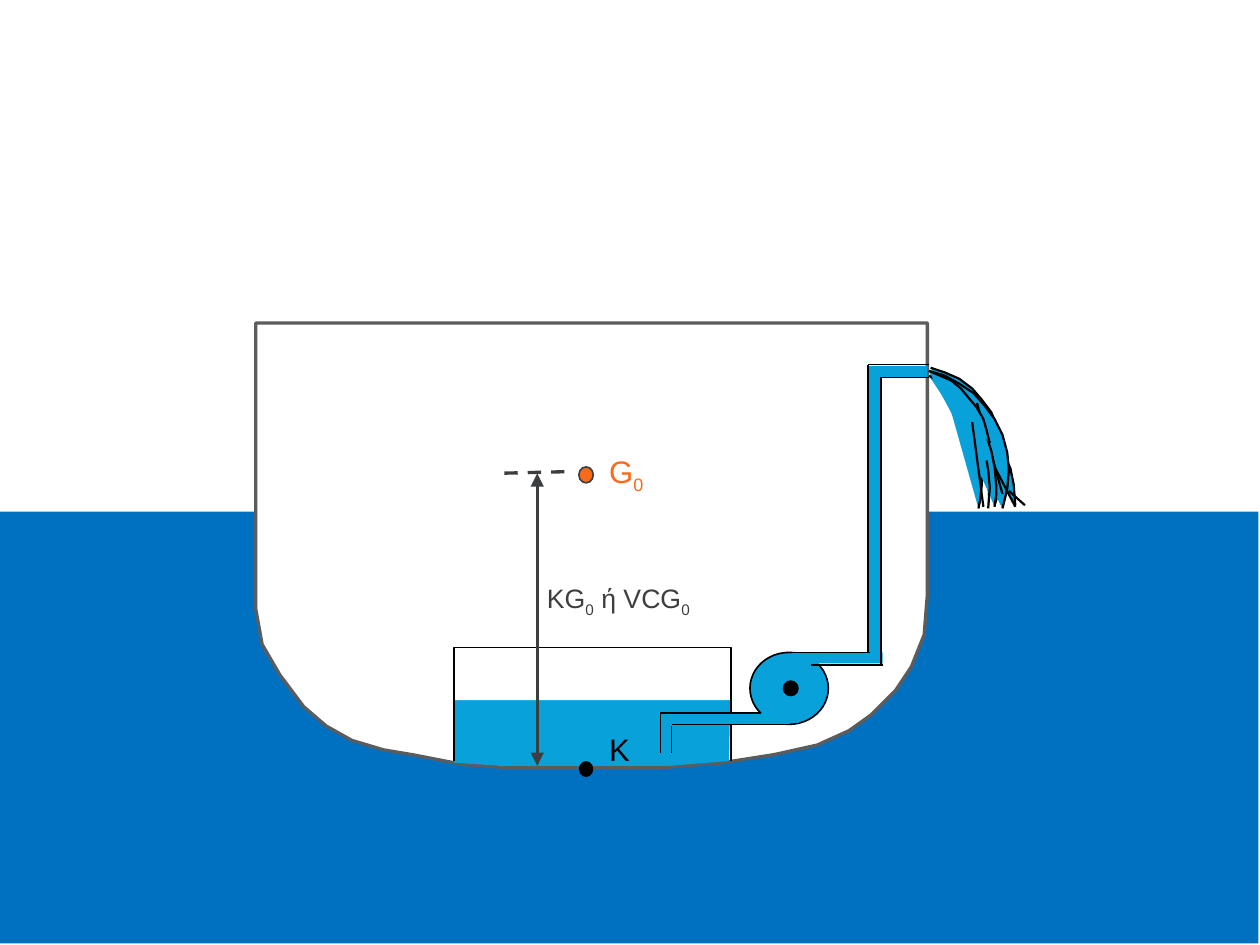
from lxml import etree
from pptx import Presentation
from pptx.dml.color import RGBColor
from pptx.enum import dml, shapes, text
from pptx.oxml import ns
from pptx.util import Inches, Pt

COLORS = {
    "sea": "0070C0", "water": "08A1D9", "white": "FFFFFF", "hull": "5B5C5E",
    "black": "000000", "dark": "3C3E3F", "orange": "F96A1B",
}

HULL = [
    (1.6, 2.02), (1.6, 3.81), (1.64, 4.03), (1.75, 4.22), (1.9, 4.42), (2.04, 4.54),
    (2.2, 4.63), (2.4, 4.69), (2.58, 4.72), (2.89, 4.78), (3.17, 4.8), (4.15, 4.8),
    (4.52, 4.77), (4.84, 4.72), (5.11, 4.66), (5.31, 4.57), (5.45, 4.47), (5.6, 4.32),
    (5.7, 4.17), (5.78, 3.97), (5.8, 3.72), (5.8, 2.02),
]
TANK_WATER = [(2.84, 4.77), (3.15, 4.79), (4.18, 4.79), (4.56, 4.76), (4.57, 4.19), (2.84, 4.19)]
TANK_WALL = [(2.84, 4.76), (2.84, 4.05), (4.57, 4.05), (4.57, 4.76)]

# Jets of discharged water, back to front, around the loose straight strands
BACK_JETS = [
    [(5.88, 2.33), (5.94, 2.39), (5.99, 2.46), (6.03, 2.53), (6.07, 2.61), (6.1, 2.69),
     (6.13, 2.81), (6.14, 2.9), (6.14, 3.04), (6.13, 3.13), (6.12, 3.18)],
    [(5.81, 2.35), (5.91, 2.4), (5.99, 2.45), (6.06, 2.51), (6.13, 2.58), (6.19, 2.66),
     (6.24, 2.75), (6.28, 2.84), (6.32, 2.93), (6.34, 3.03), (6.35, 3.16)],
    [(5.82, 2.34), (5.9, 2.37), (5.98, 2.43), (6.06, 2.5), (6.13, 2.58), (6.2, 2.67),
     (6.25, 2.77), (6.29, 2.87), (6.3, 2.96), (6.29, 3.06), (6.27, 3.16)],
    [(5.82, 2.3), (5.91, 2.33), (6, 2.37), (6.08, 2.43), (6.14, 2.5), (6.2, 2.58),
     (6.24, 2.68), (6.27, 2.81), (6.27, 2.95), (6.25, 3.06), (6.22, 3.16)],
    [(5.81, 2.32), (5.91, 2.35), (6, 2.4), (6.09, 2.46), (6.16, 2.54), (6.22, 2.62),
     (6.27, 2.72), (6.3, 2.83), (6.31, 2.94), (6.3, 3.06), (6.27, 3.18)],
]
STRANDS = [(6.11, 2.52, 6.27, 3.09), (5.97, 2.44, 6.35, 3.17), (6.31, 3.07, 6.41, 3.16)]
FRONT_JETS = [
    [(5.88, 2.34), (5.96, 2.41), (6.03, 2.48), (6.08, 2.56), (6.13, 2.64), (6.17, 2.73),
     (6.2, 2.82), (6.22, 2.92), (6.23, 3.03), (6.23, 3.1), (6.22, 3.17)],
    [(5.81, 2.32), (5.88, 2.35), (5.95, 2.38), (6.01, 2.43), (6.06, 2.49), (6.11, 2.55),
     (6.15, 2.62), (6.17, 2.69), (6.19, 2.77)],
    [(6.17, 2.88), (6.18, 2.94), (6.19, 3.05), (6.18, 3.18)],
]
FRONT_STRAND = (6.08, 2.64, 6.15, 3.17)

PIPE_FILLS = [
    (4.77, 4.43, 0.23, 0.09), (4.3, 4.46, 0.64, 0.07), (4.95, 4.08, 0.57, 0.07),
    (4.89, 4.14, 0.23, 0.09), (5.43, 2.3, 0.08, 1.81), (5.43, 2.29, 0.37, 0.07),
]
PIPE_EDGES = [
    (4.76, 4.46, 4.13, 4.46), (4.94, 4.53, 4.2, 4.53), (5.44, 4.08, 4.94, 4.08),
    (5.52, 4.16, 5.07, 4.16), (4.2, 4.71, 4.2, 4.54), (4.13, 4.71, 4.13, 4.46),
    (5.51, 4.16, 5.51, 2.36), (5.81, 2.28, 5.43, 2.28), (5.81, 2.36, 5.51, 2.36),
    (5.43, 4.08, 5.43, 2.28),
]


def rgb(name):
    return RGBColor.from_string(COLORS[name])


def style(sp, fill, line, width):
    sp.shadow.inherit = False
    if fill:
        sp.fill.solid()
        sp.fill.fore_color.rgb = rgb(fill)
    else:
        sp.fill.background()
    if line:
        sp.line.color.rgb = rgb(line)
        sp.line.width = Pt(width)
    else:
        sp.line.fill.background()


def add_preset(s, kind, box, fill, line=None, width=0.75):
    style(s.shapes.add_shape(kind, *map(Inches, box)), fill, line, width)


def add_rect(s, box, fill):
    add_preset(s, shapes.MSO_SHAPE.RECTANGLE, box, fill)


def add_oval(s, box, fill, line=None):
    add_preset(s, shapes.MSO_SHAPE.OVAL, box, fill, line)


def add_outline(s, points, fill=None, line=None, width=1, close=False):
    start, *rest = [(Inches(x), Inches(y)) for x, y in points]
    builder = s.shapes.build_freeform(*start)
    builder.add_line_segments(rest, close=close)
    style(builder.convert_to_shape(), fill, line, width)


def add_line(s, ends, color="black", width=0.75, dash=None, arrows=False):
    sp = s.shapes.add_connector(shapes.MSO_CONNECTOR.STRAIGHT, *map(Inches, ends))
    sp.line.color.rgb = rgb(color)
    sp.line.width = Pt(width)
    if dash:
        sp.line.dash_style = dash
    if arrows:
        ln = sp.line._get_or_add_ln()
        for end in ("a:headEnd", "a:tailEnd"):
            etree.SubElement(ln, ns.qn(end), type="triangle")
    etree.SubElement(sp._element.spPr, ns.qn("a:effectLst"))


def add_label(s, box, parts, size, color, fill="white", anchor=text.MSO_ANCHOR.MIDDLE):
    """Add a one-line label; every second part is a subscript."""
    sp = s.shapes.add_textbox(*map(Inches, box))
    if fill:
        sp.fill.solid()
        sp.fill.fore_color.rgb = rgb(fill)
    tf = sp.text_frame
    tf.margin_left = tf.margin_right = tf.margin_top = tf.margin_bottom = 0
    tf.word_wrap = False
    tf.vertical_anchor = anchor
    p = tf.paragraphs[0]
    p.alignment = text.PP_ALIGN.LEFT
    p.line_spacing = 0.85
    p.font.name = "Arial"
    p.font.size = Pt(size)
    p.font.color.rgb = rgb(color)
    for i, part in enumerate(parts):
        r = p.add_run()
        r.text = part
        if i % 2:
            r.font._element.set("baseline", "-25000")


def add_ship(s):
    add_rect(s, (0, 3.2, 7.87, 2.7), "sea")
    add_outline(s, HULL, "white", "hull", 1.5, close=True)
    add_outline(s, TANK_WATER, "water", close=True)


def add_discharge(s):
    for jet in BACK_JETS:
        add_outline(s, jet, "water", "black")
    for strand in STRANDS:
        add_line(s, strand, width=1)
    for jet in FRONT_JETS:
        add_outline(s, jet, "water", "black")
    add_line(s, FRONT_STRAND, width=1)


def add_tank_and_pump(s):
    add_rect(s, (2.84, 4.18, 1.73, 0.2), "white")
    add_outline(s, TANK_WALL, line="black", width=0.75)
    add_oval(s, (4.69, 4.08, 0.49, 0.45), "water", "black")
    add_oval(s, (4.9, 4.26, 0.09, 0.09), "black", "black")
    for box in PIPE_FILLS:
        add_rect(s, box, "water")
    for edge in PIPE_EDGES:
        add_line(s, edge)


def add_gravity_marks(s):
    add_oval(s, (3.62, 2.92, 0.09, 0.1), "orange", "dark")
    add_line(s, (3.53, 2.95, 3.12, 2.96), "dark", 1.5, dash=dml.MSO_LINE.DASH)
    add_line(s, (3.36, 4.79, 3.36, 2.96), "dark", 1.5, arrows=True)
    add_label(s, (3.42, 3.56, 1.07, 0.38), ["KG", "0", " ή VCG", "0"], 12, "dark")
    add_label(s, (3.81, 2.77, 0.47, 0.37), ["G", "0"], 14, "orange")
    add_oval(s, (3.62, 4.76, 0.09, 0.1), "black")
    add_label(s, (3.81, 4.42, 0.47, 0.38), ["K"], 14, "black", None, text.MSO_ANCHOR.BOTTOM)


def main():
    prs = Presentation()
    prs.slide_width, prs.slide_height = Inches(7.88), Inches(5.91)
    s = prs.slides.add_slide(prs.slide_layouts[6])
    add_ship(s)
    add_discharge(s)
    add_tank_and_pump(s)
    add_gravity_marks(s)
    prs.save("out.pptx")


if __name__ == "__main__":
    main()
